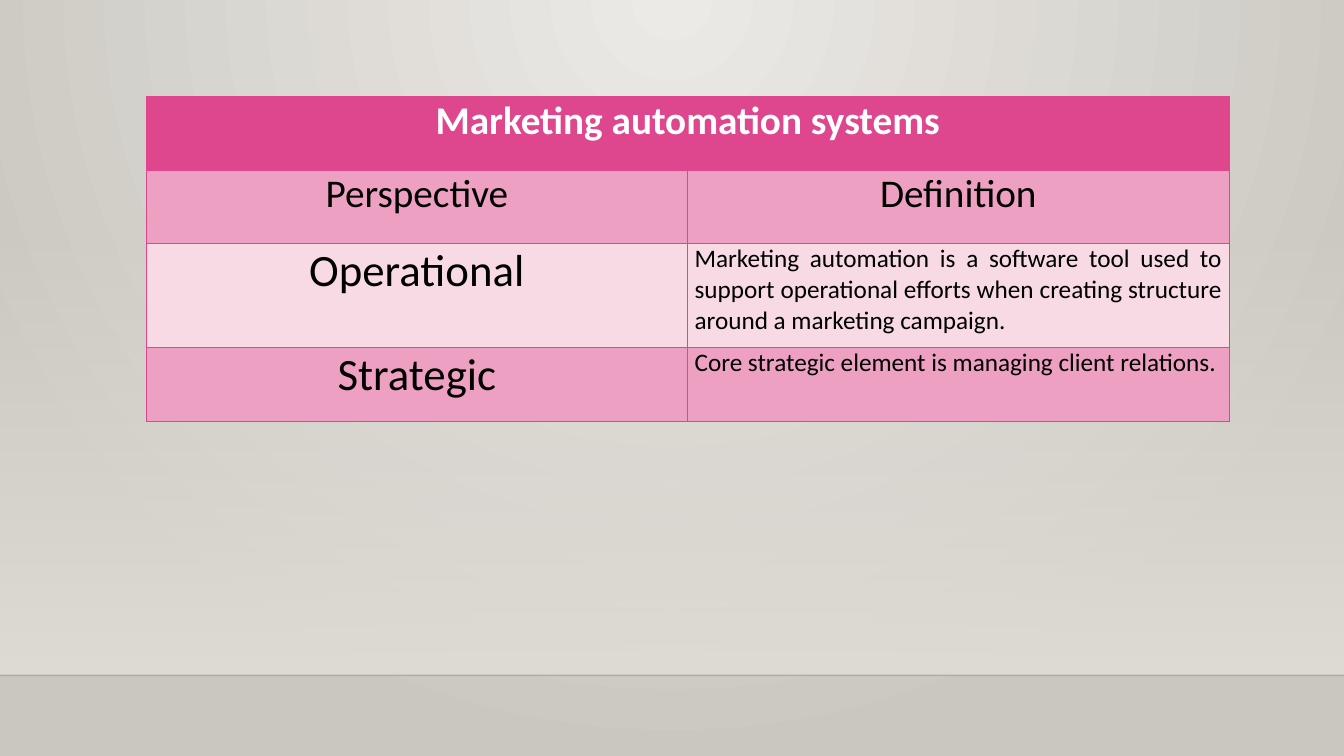
from lxml import etree
from pptx import Presentation
from pptx.dml.color import RGBColor
from pptx.enum.shapes import MSO_CONNECTOR, MSO_SHAPE
from pptx.enum.text import PP_ALIGN
from pptx.oxml import parse_xml
from pptx.oxml.ns import nsdecls, qn
from pptx.util import Pt

CENTER, JUSTIFY = PP_ALIGN.CENTER, PP_ALIGN.JUSTIFY
RECT, STRAIGHT = MSO_SHAPE.RECTANGLE, MSO_CONNECTOR.STRAIGHT
PX = 9144
W, H = 1333, 750
PINK, BAND, PALE = "DE478E", "EDA0C1", "F7DAE4"
WHITE, BLACK = "FFFFFF", "000000"

HEADING = "Marketing automation systems"
ROWS = [
    ("Perspective", "Definition", 28, 28, CENTER, BAND),
    ("Operational",
     "Marketing automation is a software tool used to support operational "
     "efforts when creating structure around a marketing campaign.",
     32, 18, JUSTIFY, PALE),
    ("Strategic", "Core strategic element is managing client relations.",
     32, 18, JUSTIFY, BAND),
]
ROW_HEIGHTS = [73, 73, 103, 73]


def px(n):
    return int(n * PX)


def rgb(value):
    return RGBColor.from_string(value)


def gradient(stops, direction):
    gs = "".join(
        f'<a:gs pos="{pos * 1000}"><a:srgbClr val="{color}">'
        f'<a:alpha val="{alpha * 1000}"/></a:srgbClr></a:gs>'
        for pos, color, alpha in stops)
    return (f'<a:gradFill {nsdecls("a")} rotWithShape="1">'
            f'<a:gsLst>{gs}</a:gsLst>{direction}</a:gradFill>')


def add_background(s):
    radial = ('<a:path path="circle"><a:fillToRect l="43000" t="0" '
              'r="43000" b="100000"/></a:path>')
    fill = gradient([(0, "ECEAE7", 100), (100, "CAC7C1", 100)], radial)
    s._element.cSld.insert(0, parse_xml(
        f'<p:bg {nsdecls("p", "a")}><p:bgPr>{fill}<a:effectLst/></p:bgPr></p:bg>'))


def add_floor(s, x, y, w, h):
    wall = s.shapes.add_shape(RECT, px(x), px(y), px(w), px(h))
    wall.shadow.inherit = False
    wall.line.fill.background()
    fade = gradient([(0, "DFDBD5", 0), (100, "DFDBD5", 100)],
                    '<a:lin ang="5400000" scaled="0"/>')
    wall._element.spPr.find(qn("a:prstGeom")).addnext(parse_xml(fade))
    edge = s.shapes.add_connector(STRAIGHT, px(x), px(y + h), px(x + w), px(y + h))
    edge.line.width = Pt(1)
    edge.line.color.rgb = rgb("000001")
    color = edge._element.spPr.find(".//" + qn("a:srgbClr"))
    etree.SubElement(color, qn("a:alpha")).set("val", "20000")
    etree.SubElement(edge._element.spPr, qn("a:effectLst"))


def set_borders(cell):
    tcPr = cell._tc.get_or_add_tcPr()
    for i, side in enumerate(("lnL", "lnR", "lnT", "lnB")):
        tcPr.insert(i, parse_xml(
            f'<a:{side} {nsdecls("a")} w="9525"><a:solidFill>'
            f'<a:srgbClr val="{PINK}"/></a:solidFill></a:{side}>'))


def fill_cell(cell, text, size, align, fill, color=BLACK, bold=False):
    cell.fill.solid()
    cell.fill.fore_color.rgb = rgb(fill)
    cell.margin_left = cell.margin_right = px(7)
    cell.margin_top = cell.margin_bottom = 0
    p = cell.text_frame.paragraphs[0]
    p.text = text
    p.alignment = align
    p.space_after = Pt(10)
    font = p.runs[0].font
    font.name, font.size, font.bold = "Calibri", Pt(size), bold
    font.color.rgb = rgb(color)


def add_systems_table(s, x, y, w):
    shape = s.shapes.add_table(len(ROW_HEIGHTS), 2, px(x), px(y), px(w),
                               px(sum(ROW_HEIGHTS)))
    table = shape.table
    for col in table.columns:
        col.width = px(w / 2)
    for row, height in zip(table.rows, ROW_HEIGHTS):
        row.height = px(height)
    table.cell(0, 0).merge(table.cell(0, 1))
    fill_cell(table.cell(0, 0), HEADING, 28, CENTER, PINK, WHITE, True)
    for i, (name, text, name_size, text_size, align, fill) in enumerate(ROWS, 1):
        fill_cell(table.cell(i, 0), name, name_size, CENTER, fill)
        fill_cell(table.cell(i, 1), text, text_size, align, fill)
    for cell in table.iter_cells():
        set_borders(cell)


def main():
    prs = Presentation()
    prs.slide_width, prs.slide_height = px(W), px(H)
    s = prs.slides.add_slide(prs.slide_layouts[6])
    add_background(s)
    add_floor(s, 0, 221, W, 449)
    add_systems_table(s, 145, 96, 1074)
    prs.save("out.pptx")


if __name__ == "__main__":
    main()
